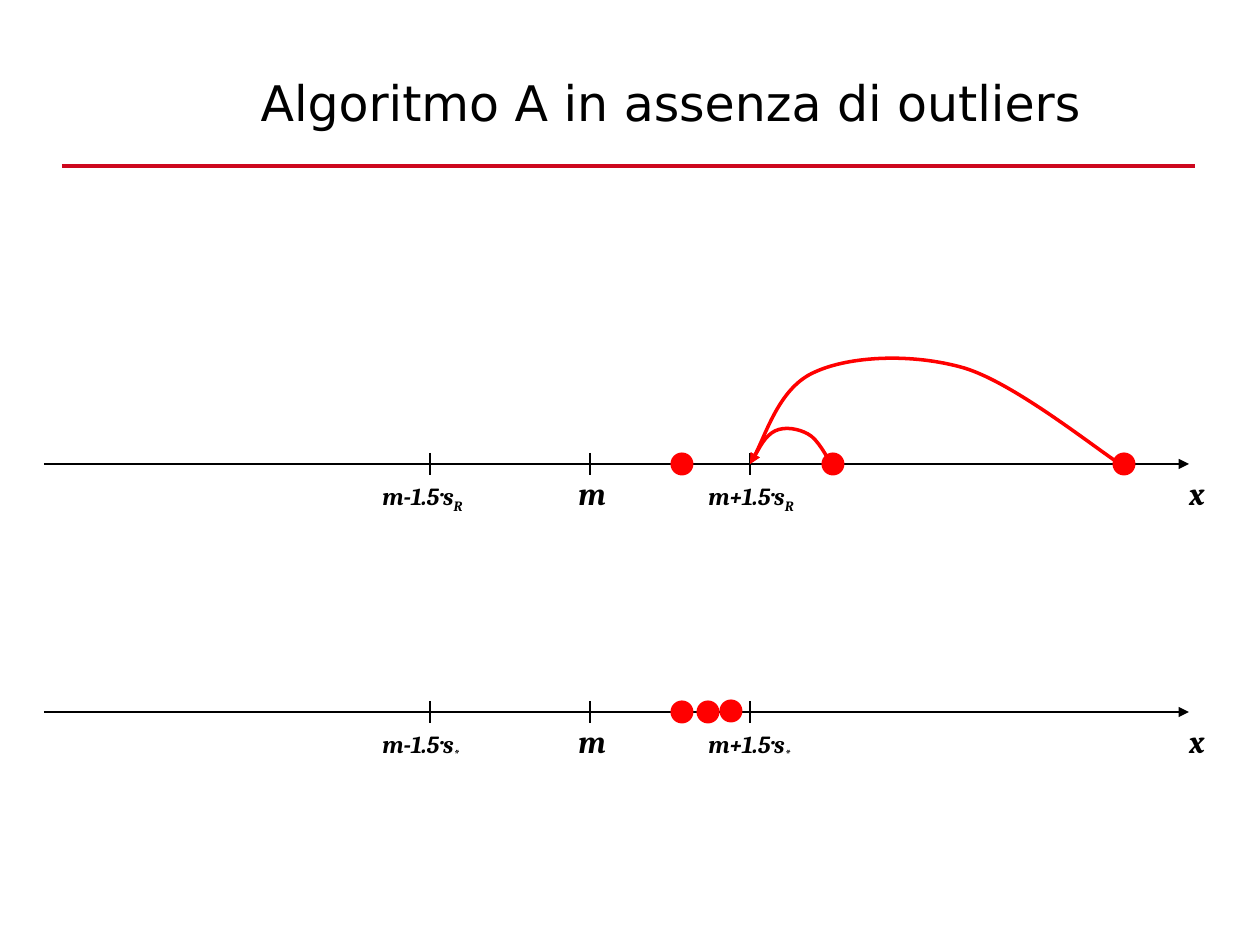
from lxml import etree
from pptx import Presentation
from pptx.dml.color import RGBColor
from pptx.enum.shapes import MSO_CONNECTOR, MSO_SHAPE
from pptx.enum.text import MSO_ANCHOR, MSO_AUTO_SIZE, PP_ALIGN
from pptx.oxml.ns import qn
from pptx.util import Pt

STRAIGHT = MSO_CONNECTOR.STRAIGHT
OVAL = MSO_SHAPE.OVAL
TOP = MSO_ANCHOR.TOP
LEFT = PP_ALIGN.LEFT
NO_AUTOFIT = MSO_AUTO_SIZE.NONE
FIT_SHAPE = MSO_AUTO_SIZE.SHAPE_TO_FIT_TEXT

EMU_PER_PX = 914400 / 126
COLORS = {"ink": "000000", "rule": "CD071E", "data": "FF0000"}
TITLE_FONT, LABEL_FONT = "DejaVu Sans", "Cambria"

AXIS_LEFT, AXIS_WIDTH = 44, 1145
CENTRE, TICK_STEP, TICK_HALF = 546, 160, 11
UPPER_LIMIT = CENTRE + TICK_STEP
DOT = 23

NEAR_ARC = [(787, 0), (784, -5), (774, -25), (764, -30), (755, -35),
            (741, -38), (731, -33), (721, -28), (711, -8), (UPPER_LIMIT, 0)]
FAR_ARC = [(1076, 0), (1051, -16), (970, -81), (920, -96), (868, -111),
           (806, -108), (771, -92), (736, -77), (719, -20), (UPPER_LIMIT, 0)]


def px(length):
    return round(length * EMU_PER_PX)


def color(key):
    return RGBColor.from_string(COLORS[key])


def style_line(line, key, points, arrow=False):
    line.color.rgb = color(key)
    line.width = Pt(points)
    if arrow:
        ln = line._get_or_add_ln()
        etree.SubElement(ln, qn("a:tailEnd"), type="triangle")


def add_line(slide, x1, y1, x2, y2, key, points, arrow=False):
    segment = slide.shapes.add_connector(STRAIGHT, px(x1), px(y1), px(x2), px(y2))
    style_line(segment.line, key, points, arrow)
    etree.SubElement(segment._element.spPr, qn("a:effectLst"))


def add_label(slide, left, top, width, height, size, text, subscript=""):
    label = slide.shapes.add_textbox(px(left), px(top), px(width), px(height))
    frame = label.text_frame
    frame.word_wrap = False
    frame.auto_size = FIT_SHAPE
    paragraph = frame.paragraphs[0]
    for part in filter(None, (text, subscript)):
        run = paragraph.add_run()
        run.text = part
        font = run.font
        font.name, font.size = LABEL_FONT, Pt(size)
        font.bold = font.italic = True
        font.color.rgb = color("ink")
        if part == subscript:
            font._element.set("baseline", "-25000")


def add_dot(slide, centre_x, centre_y):
    dot = slide.shapes.add_shape(OVAL, px(centre_x - DOT / 2), px(centre_y - DOT / 2),
                                 px(DOT), px(DOT))
    dot.shadow.inherit = False
    dot.fill.solid()
    dot.fill.fore_color.rgb = color("data")
    dot.line.fill.background()


def add_arc(slide, left, top, points):
    corners = [(px(left + x), px(top + y)) for x, y in points]
    builder = slide.shapes.build_freeform(*corners[0])
    builder.add_line_segments(corners[1:], close=False)
    arc = builder.convert_to_shape()
    arc.shadow.inherit = False
    arc.fill.background()
    style_line(arc.line, "data", 2, arrow=True)
    outline = arc._element.find(".//" + qn("a:path"))
    steps = outline.findall(qn("a:lnTo"))
    for start in range(0, len(steps), 3):
        bezier = etree.SubElement(outline, qn("a:cubicBezTo"))
        for step in steps[start:start + 3]:
            bezier.append(step[0])
            outline.remove(step)


def add_heading(slide, left, top, width, height):
    add_line(slide, 62, 166, 1195, 166, "rule", 2)
    title = slide.shapes.title
    title.left, title.top, title.width, title.height = map(px, (left, top, width, height))
    frame = title.text_frame
    frame.word_wrap = True
    frame.auto_size = NO_AUTOFIT
    frame.vertical_anchor = TOP
    paragraph = frame.paragraphs[0]
    paragraph.alignment = LEFT
    paragraph.line_spacing = 0.9
    run = paragraph.add_run()
    run.text = "Algoritmo A in assenza di outliers"
    run.font.name, run.font.size = TITLE_FONT, Pt(28)
    run.font.color.rgb = color("ink")


def add_axis(slide, left, top, width, subscript, dots, arcs=()):
    add_line(slide, left, top, left + width, top, "ink", 0.75, arrow=True)
    for step in (-1, 0, 1):
        tick = left + CENTRE + step * TICK_STEP
        add_line(slide, tick, top - TICK_HALF, tick, top + TICK_HALF, "ink", 0.75)
    add_label(slide, left + 522, top + 4, 52, 50, 18, "m")
    add_label(slide, left + 1133, top + 4, 40, 50, 18, "x")
    add_label(slide, left + 652, top + 11, 122, 43, 14, "m+1.5·s", subscript)
    add_label(slide, left + 326, top + 11, 112, 43, 14, "m-1.5·s", subscript)
    for x, y in dots:
        add_dot(slide, left + x, top + y)
    for points in arcs:
        add_arc(slide, left, top, points)


def main():
    deck = Presentation()
    deck.slide_width, deck.slide_height = px(1260), px(945)
    slide = deck.slides.add_slide(deck.slide_layouts[5])
    add_heading(slide, 248, 73, 1134, 131)
    add_axis(slide, AXIS_LEFT, 712, AXIS_WIDTH, "*", [(638, 0), (687, -1), (664, 0)])
    add_axis(slide, AXIS_LEFT, 464, AXIS_WIDTH, "R", [(638, 0), (789, 0), (1080, 0)],
             [NEAR_ARC, FAR_ARC])
    deck.save("out.pptx")


if __name__ == "__main__":
    main()
